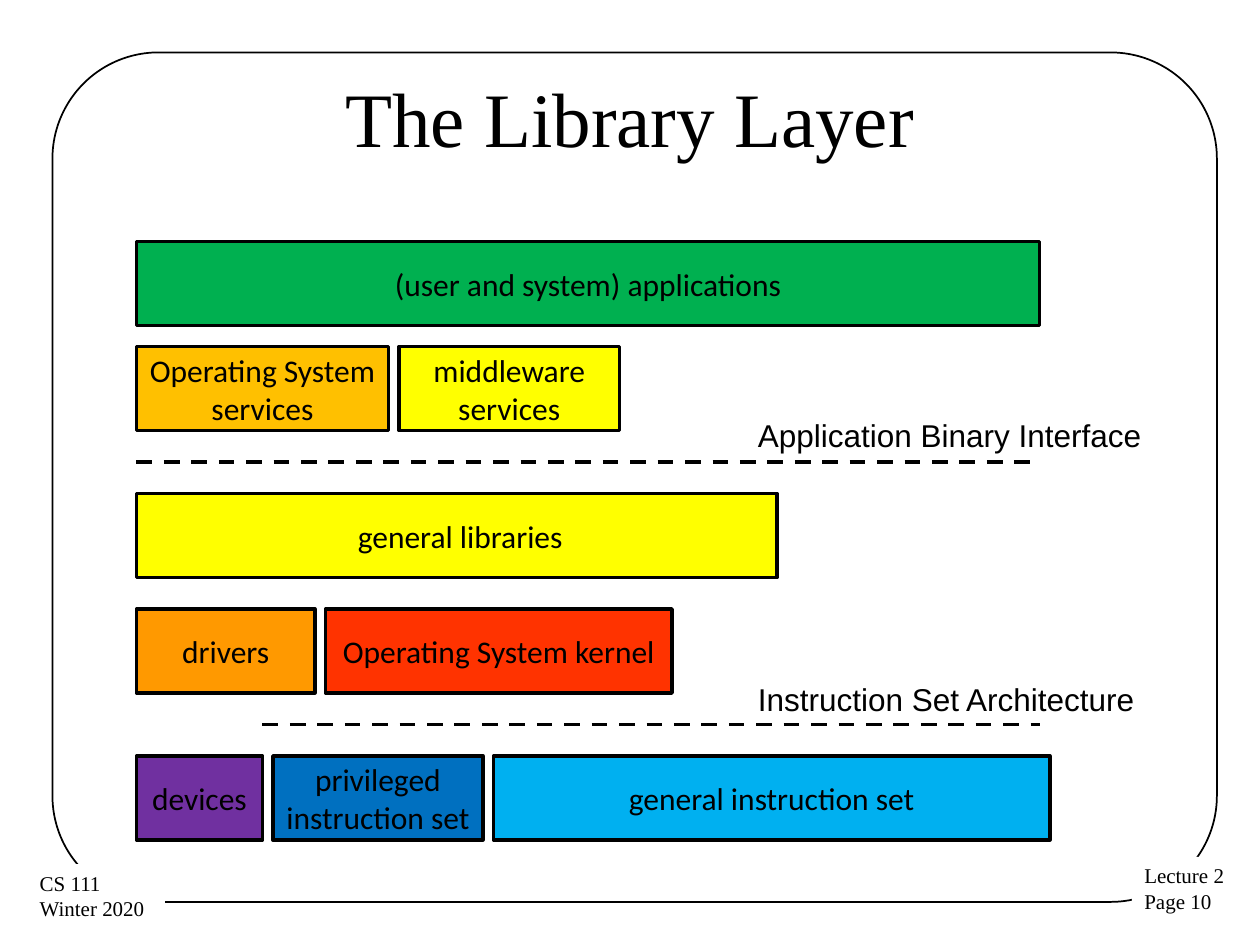
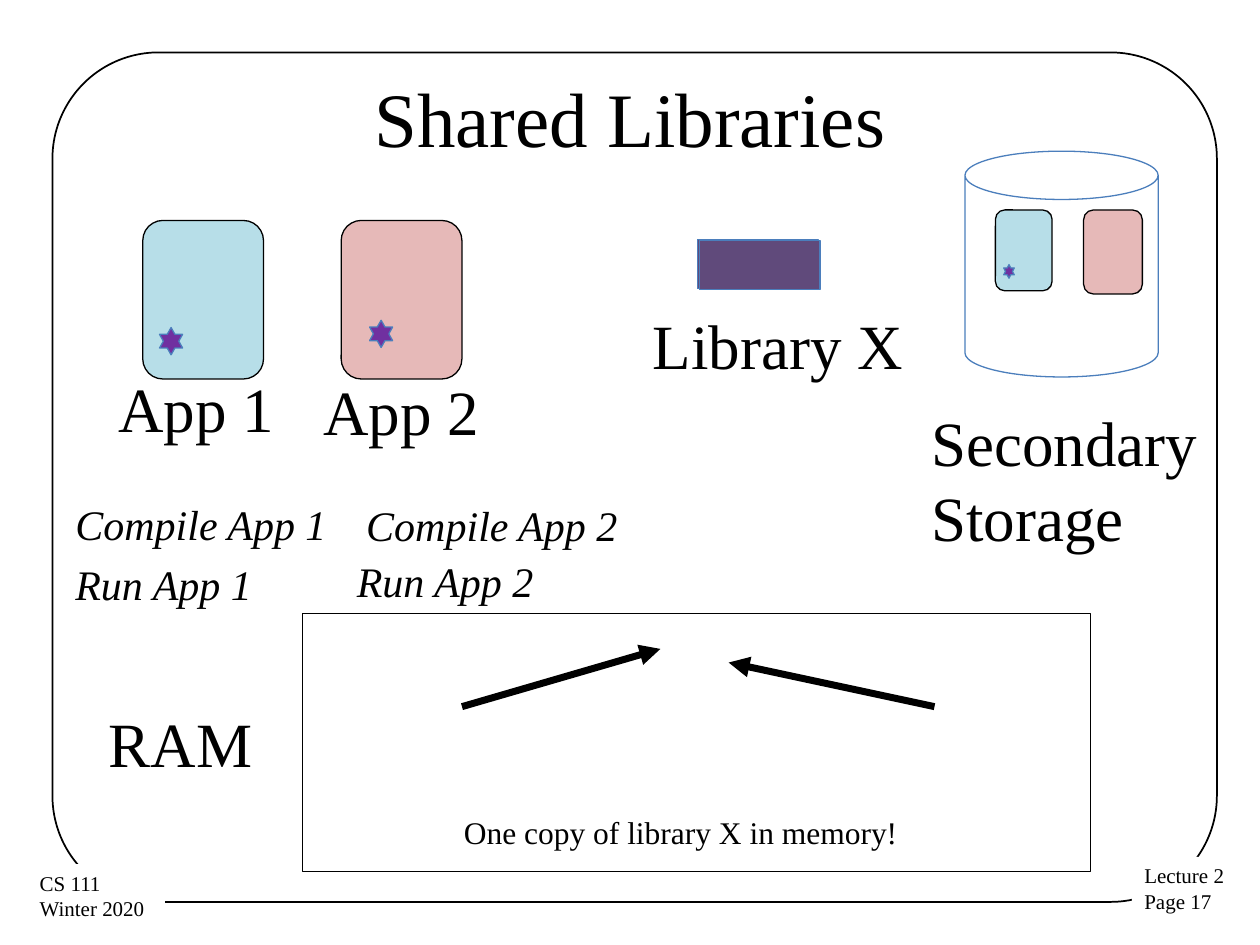
"""Build two lecture slides on the library layer and shared libraries."""
from typing import NamedTuple, Optional

from lxml import etree
from pptx import Presentation
from pptx.dml.color import RGBColor
from pptx.enum.dml import MSO_LINE_DASH_STYLE
from pptx.enum.shapes import MSO_CONNECTOR, MSO_SHAPE
from pptx.enum.text import MSO_ANCHOR, MSO_AUTO_SIZE, PP_ALIGN
from pptx.oxml.ns import qn
from pptx.util import Pt

RECT = MSO_SHAPE.RECTANGLE
ROUNDED = MSO_SHAPE.ROUNDED_RECTANGLE
STAR = MSO_SHAPE.STAR_6_POINT
CAN = MSO_SHAPE.CAN
STRAIGHT = MSO_CONNECTOR.STRAIGHT
DASH = MSO_LINE_DASH_STYLE.DASH
MIDDLE = MSO_ANCHOR.MIDDLE
CENTER, LEFT = PP_ALIGN.CENTER, PP_ALIGN.LEFT
FIT_TEXT = MSO_AUTO_SIZE.SHAPE_TO_FIT_TEXT

BLACK = RGBColor(0x00, 0x00, 0x00)
WHITE = RGBColor(0xFF, 0xFF, 0xFF)
GREEN = RGBColor(0x00, 0xB0, 0x50)
AMBER = RGBColor(0xFF, 0xC0, 0x00)
YELLOW = RGBColor(0xFF, 0xFF, 0x00)
ORANGE = RGBColor(0xFF, 0x99, 0x00)
RED = RGBColor(0xFF, 0x33, 0x00)
PURPLE = RGBColor(0x70, 0x30, 0xA0)
BLUE = RGBColor(0x00, 0x70, 0xC0)
SKY = RGBColor(0x00, 0xB0, 0xF0)
AQUA = RGBColor(0xB7, 0xDE, 0xE8)
ROSE = RGBColor(0xE6, 0xB9, 0xB8)
VIOLET = RGBColor(0x60, 0x4A, 0x7B)
STEEL = RGBColor(0x4B, 0x7E, 0xBC)

SERIF, SANS, BOX_FONT = "Times New Roman", "Arial", "Calibri"
EMU_PER_PX = 7620
SLIDE_SIZE = (1200, 900)
STACK_LEFT, BLOCK_HEIGHT, BLOCK_GAP = 130, 80, 10


class Block(NamedTuple):
    text: str
    width: int
    fill: RGBColor


class Layer(NamedTuple):
    top: int
    blocks: tuple[Block, ...]


class Boundary(NamedTuple):
    name: str
    left: int
    y: int
    label_top: int


class Figure(NamedTuple):
    kind: int
    box: tuple[int, int, int, int]
    fill: Optional[RGBColor] = None
    line: Optional[RGBColor] = BLACK
    weight: float = 0.75


class Label(NamedTuple):
    lines: tuple[str, ...]
    box: tuple[int, int, int, int]
    size: int = 36
    italic: bool = False
    font: str = SERIF
    wrap: bool = False
    fill: Optional[RGBColor] = None


LAYERS = (
    Layer(230, (Block("(user and system) applications", 860, GREEN),)),
    Layer(330, (Block("Operating System services", 240, AMBER),
                Block("middleware services", 210, YELLOW))),
    Layer(470, (Block(" general libraries", 610, YELLOW),)),
    Layer(580, (Block("drivers", 170, ORANGE),
                Block("Operating System kernel", 330, RED))),
    Layer(720, (Block("devices", 120, PURPLE),
                Block("privileged instruction set", 200, BLUE),
                Block("general instruction set", 530, SKY))),
)
BOUNDARY_RIGHT = 990
BOUNDARIES = (
    Boundary("Application Binary Interface", 130, 440, 390),
    Boundary("Instruction Set Architecture", 250, 690, 642),
)

FRAME = Figure(ROUNDED, (50, 50, 1109, 809), weight=1)
SHARING_FIGURES = (
    Figure(RECT, (288, 584, 751, 246)),
    Figure(ROUNDED, (136, 210, 115, 151), AQUA),
    Figure(ROUNDED, (325, 210, 115, 151), ROSE),
    Figure(CAN, (919, 144, 184, 215), None, STEEL),
    Figure(RECT, (664, 228, 115, 47), VIOLET, STEEL),
    Figure(RECT, (666, 229, 115, 47), VIOLET, STEEL),
    Figure(STAR, (152, 312, 22, 26), PURPLE, STEEL),
    Figure(STAR, (352, 305, 22, 26), PURPLE, STEEL),
    Figure(ROUNDED, (948, 200, 54, 77), AQUA),
    Figure(STAR, (956, 252, 10, 13), PURPLE, STEEL),
    Figure(ROUNDED, (1032, 200, 56, 80), ROSE),
)
SHARING_LABELS = (
    Label(("RAM",), (92, 665, 162, 85)),
    Label(("App 1",), (101, 346, 174, 85)),
    Label(("App 2",), (296, 349, 174, 85)),
    Label(("Library X",), (610, 286, 265, 85)),
    Label(("Secondary", "Storage"), (875, 378, 280, 157)),
    Label(("Compile App 1",), (60, 469, 265, 60), 24, True),
    Label(("Compile App 2",), (337, 470, 265, 60), 24, True),
    Label(("Run App 1",), (60, 526, 194, 60), 24, True),
    Label(("Run App 2",), (328, 523, 194, 60), 24, True),
    Label(("One copy of library X in memory!",), (430, 768, 442, 48), 18, wrap=True),
)
LIBRARY_REFERENCES = ((440, 673, 629, 618), (890, 673, 694, 631))


def emu(*lengths: int) -> list[int]:
    return [length * EMU_PER_PX for length in lengths]


def style_text(frame, lines: tuple[str, ...], font: str, size: int,
               align=LEFT, italic: bool = False) -> None:
    frame.text = "\n".join(lines)
    for paragraph in frame.paragraphs:
        paragraph.alignment = align
        paragraph.font.name = font
        paragraph.font.size = Pt(size)
        paragraph.font.italic = italic
        paragraph.font.color.rgb = BLACK


def draw_figure(slide, figure: Figure):
    shape = slide.shapes.add_shape(figure.kind, *emu(*figure.box))
    shape.shadow.inherit = False
    if figure.fill is None:
        shape.fill.background()
    else:
        shape.fill.solid()
        shape.fill.fore_color.rgb = figure.fill
    shape.line.color.rgb = figure.line
    shape.line.width = Pt(figure.weight)
    return shape


def draw_label(slide, label: Label) -> None:
    box = slide.shapes.add_textbox(*emu(*label.box))
    if label.fill is not None:
        box.fill.solid()
        box.fill.fore_color.rgb = label.fill
    style_text(box.text_frame, label.lines, label.font, label.size, italic=label.italic)
    box.text_frame.word_wrap = label.wrap
    box.text_frame.auto_size = FIT_TEXT


def draw_line(slide, ends: tuple[int, int, int, int], weight: float,
              dashed: bool = False, arrow: bool = False) -> None:
    connector = slide.shapes.add_connector(STRAIGHT, *emu(*ends))
    connector.line.color.rgb = BLACK
    connector.line.width = Pt(weight)
    if dashed:
        connector.line.dash_style = DASH
    properties = connector._element.spPr
    if arrow:
        etree.SubElement(properties.find(qn("a:ln")), qn("a:tailEnd"), type="triangle")
    etree.SubElement(properties, qn("a:effectLst"))


def add_lecture_slide(deck, title: str, page: int):
    slide = deck.slides.add_slide(deck.slide_layouts[5])
    heading = slide.shapes.title
    heading.left, heading.top, heading.width, heading.height = emu(60, 36, 1080, 150)
    style_text(heading.text_frame, (title,), SERIF, 44, CENTER)
    heading.text_frame.vertical_anchor = MIDDLE
    frame = draw_figure(slide, FRAME)
    frame.adjustments[0] = 0.125
    draw_label(slide, Label(("Lecture 2", f"Page {page}"), (1078, 816, 102, 61), 12, fill=WHITE))
    draw_label(slide, Label(("CS 111", "Winter 2020"), (26, 823, 131, 61), 12, fill=WHITE))
    return slide


def draw_layer(slide, layer: Layer) -> None:
    left = STACK_LEFT
    for block in layer.blocks:
        shape = draw_figure(slide, Figure(
            RECT, (left, layer.top, block.width, BLOCK_HEIGHT), block.fill, weight=2))
        style_text(shape.text_frame, (block.text,), BOX_FONT, 18, CENTER)
        shape.text_frame.vertical_anchor = MIDDLE
        shape.text_frame.word_wrap = True
        left += block.width + BLOCK_GAP


def build_library_layer(deck) -> None:
    slide = add_lecture_slide(deck, "The Library Layer", 10)
    for layer in LAYERS:
        draw_layer(slide, layer)
    for boundary in BOUNDARIES:
        draw_line(slide, (boundary.left, boundary.y, BOUNDARY_RIGHT, boundary.y), 2.25, dashed=True)
        draw_label(slide, Label((boundary.name,), (710, boundary.label_top, 390, 48), 18,
                                font=SANS, wrap=True))


def build_shared_libraries(deck) -> None:
    slide = add_lecture_slide(deck, "Shared Libraries", 17)
    for figure in SHARING_FIGURES:
        draw_figure(slide, figure)
    for label in SHARING_LABELS:
        draw_label(slide, label)
    for reference in LIBRARY_REFERENCES:
        draw_line(slide, reference, 4, arrow=True)


def main() -> None:
    deck = Presentation()
    deck.slide_width, deck.slide_height = emu(*SLIDE_SIZE)
    build_library_layer(deck)
    build_shared_libraries(deck)
    deck.save("out.pptx")


if __name__ == "__main__":
    main()
